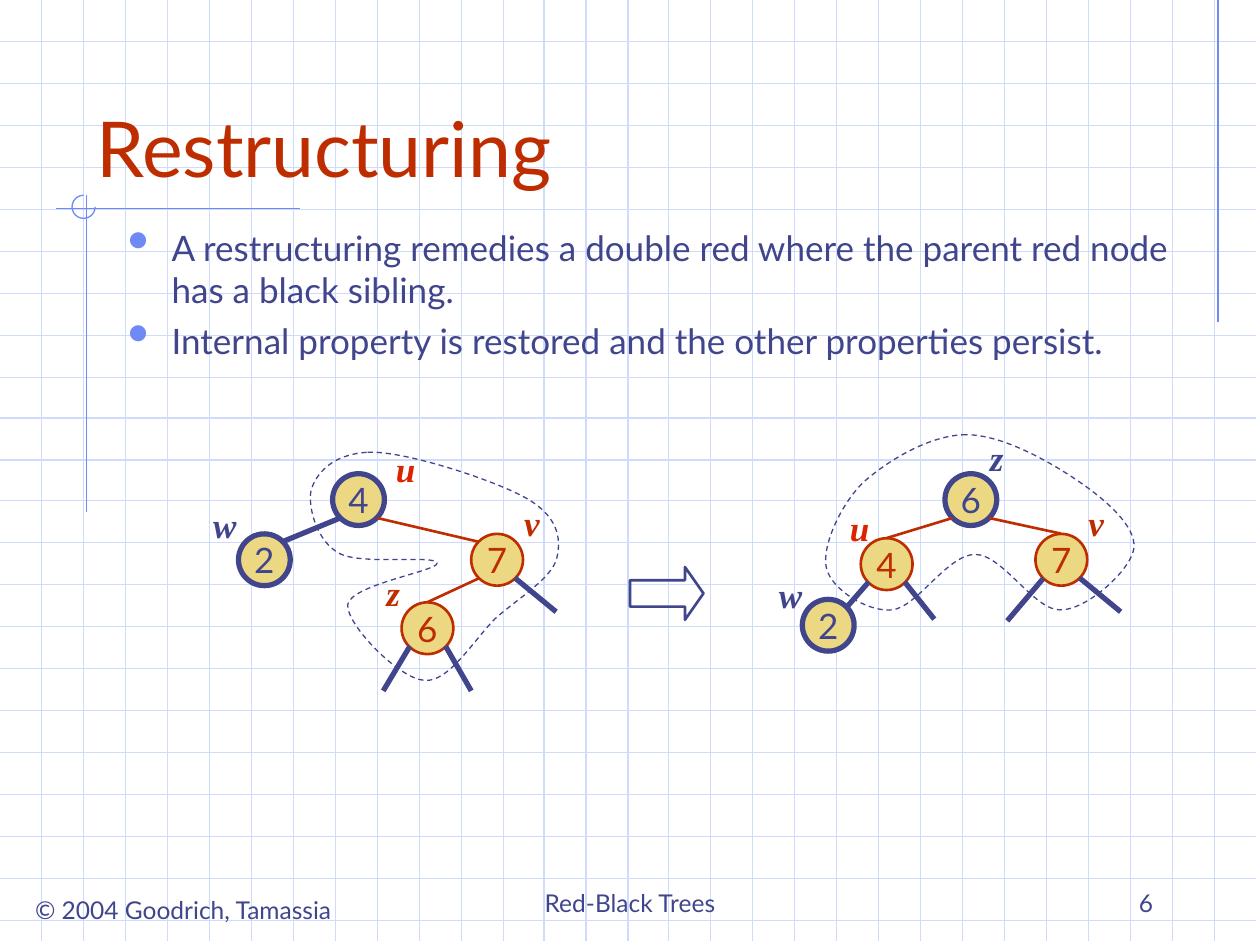
from lxml import etree
from pptx import Presentation
from pptx import util as u
from pptx.dml.color import RGBColor
from pptx.enum import dml, shapes, text
from pptx.oxml.ns import qn

Pt = u.Pt
GRID = RGBColor(0xCF, 0xDB, 0xFD)
ACCENT = RGBColor(0x6F, 0x89, 0xF7)
NAVY = RGBColor(0x40, 0x45, 0x8C)
RED = RGBColor(0xBE, 0x2D, 0x00)
BRIGHT_RED = RGBColor(0xDC, 0x23, 0x00)
SAND = RGBColor(0xEC, 0xD8, 0x82)
LEFT, CENTER, RIGHT = text.PP_ALIGN.LEFT, text.PP_ALIGN.CENTER, text.PP_ALIGN.RIGHT
TOP, MIDDLE, BOTTOM = text.MSO_ANCHOR.TOP, text.MSO_ANCHOR.MIDDLE, text.MSO_ANCHOR.BOTTOM

deck = Presentation()
deck.slide_width, deck.slide_height = Pt(720), Pt(540)
slide = deck.slides.add_slide(deck.slide_layouts[6])


def draw_line(x1, y1, x2, y2, color, width):
    line = slide.shapes.add_connector(
        shapes.MSO_CONNECTOR.STRAIGHT, Pt(x1), Pt(y1), Pt(x2), Pt(y2))
    line.line.color.rgb = color
    line.line.width = Pt(width)
    etree.SubElement(line._element.spPr, qn("a:effectLst"))


def write(shape, lines, size, color, align=CENTER, anchor=TOP, font="Lato", wrap=True):
    frame = shape.text_frame
    frame.word_wrap = wrap
    frame.vertical_anchor = anchor
    frame.text = "\n".join(lines)
    for paragraph in frame.paragraphs:
        paragraph.alignment = align
        paragraph.font.size = Pt(size)
        paragraph.font.name = font
        paragraph.font.color.rgb = color
    return frame.paragraphs


for row in range(1, 23):
    y = 24 * row - 0.15 - (row >= 10) - 0.7 * (row >= 12)
    draw_line(0, y, 718, y, GRID, 0.75)
for column in range(1, 30):
    x = 24 * column - 0.15 - (column >= 13) - 0.7 * (column >= 16)
    draw_line(x, 0, x, 538, GRID, 0.75)

draw_line(696, 0, 696, 184.3, ACCENT, 0.75)
draw_line(171.4, 119.3, 32.2, 119.3, ACCENT, 0.75)
draw_line(49.5, 111.6, 49.5, 292.5, ACCENT, 0.75)
corner = slide.shapes.add_shape(
    shapes.MSO_SHAPE.ARC, Pt(41.2), Pt(111.6), Pt(13.2), Pt(13.2))
corner.adjustments[0], corner.adjustments[1] = 0, 162
corner.fill.background()
corner.line.color.rgb = ACCENT
corner.line.width = Pt(0.75)
corner.shadow.inherit = False

for words, box, size, color, align, anchor, wrap in [
    ("© 2004 Goodrich, Tamassia", (11.5, 507.8, 186.5, 24.5), 14, NAVY, CENTER, TOP, False),
    ("Red-Black Trees", (246, 492, 228, 36), 14, NAVY, CENTER, BOTTOM, True),
    ("6", (516, 492, 150, 36), 14, NAVY, RIGHT, BOTTOM, True),
    ("Restructuring", (48, 24, 612, 90), 44, RED, LEFT, BOTTOM, True),
]:
    write(slide.shapes.add_textbox(*map(Pt, box)), [words], size, color, align, anchor, wrap=wrap)

body = slide.shapes.add_textbox(Pt(66), Pt(126), Pt(612), Pt(138))
body.text_frame.word_wrap = True
body.text_frame.text = "\n".join([
    "A restructuring remedies a double red where the parent red node has a black sibling.",
    "Internal property is restored and the other properties persist.",
])
body.text_frame.paragraphs[1].space_before = Pt(5)
for paragraph in body.text_frame.paragraphs:
    properties = paragraph._p.get_or_add_pPr()
    properties.set("marL", str(Pt(25)))
    properties.set("indent", str(Pt(-25)))
    bullet_color = etree.SubElement(properties, qn("a:buClr"))
    etree.SubElement(bullet_color, qn("a:srgbClr"), val=str(ACCENT))
    etree.SubElement(properties, qn("a:buSzPct"), val="176000")
    etree.SubElement(properties, qn("a:buFont"), typeface="OpenSymbol")
    etree.SubElement(properties, qn("a:buChar"), char="•")
    paragraph.alignment = LEFT
    paragraph.font.size = Pt(20)
    paragraph.font.name = "Lato"
    paragraph.font.color.rgb = NAVY

for key, x, y, color in [
    ("4", 190.1, 270.7, NAVY), ("6", 229.5, 344.2, RED),
    ("7", 269.3, 305.1, RED), ("2", 136.3, 305.1, NAVY),
    ("4", 491.9, 307.6, RED), ("6", 540, 270.7, NAVY),
    ("7", 591.7, 305.1, RED), ("2", 458.5, 342.5, NAVY),
]:
    node = slide.shapes.add_shape(shapes.MSO_SHAPE.OVAL, Pt(x), Pt(y), Pt(29.6), Pt(29.6))
    node.fill.solid()
    node.fill.fore_color.rgb = SAND
    node.line.color.rgb = color
    node.line.width = Pt(3 if color == NAVY else 1.5)
    node.shadow.inherit = False
    write(node, [key], 20, color, anchor=MIDDLE, wrap=False)

for edge in [
    (215.6, 296, 273.6, 309.6), (273.6, 330.5, 244.1, 344.2),
    (506.9, 307.4, 544.3, 296), (606.2, 304.9, 565.2, 296),
]:
    draw_line(*edge, RED, 1.5)
for edge in [
    (254.6, 369.2, 269.3, 394.8), (234.3, 369.2, 219, 394.8),
    (294.3, 330.3, 317.8, 349.6), (194.4, 296, 161.3, 309.6),
    (517, 332.6, 533.9, 353.8), (596.2, 330.5, 575.6, 354.8),
    (617, 330.3, 640.4, 349.6), (496.4, 332.6, 483.8, 347),
]:
    draw_line(*edge, NAVY, 3)

for letter, x, y, width, color in [
    ("z", 207.4, 323.3, 34.6, RED), ("v", 288.2, 283, 31.7, RED),
    ("w", 108.7, 284.4, 39.6, NAVY), ("u", 213.8, 252, 36, BRIGHT_RED),
    ("z", 552.2, 246, 34.6, NAVY), ("v", 610.6, 283, 31.7, RED),
    ("w", 432, 324, 39.6, NAVY), ("u", 478.6, 285.8, 25.2, BRIGHT_RED),
]:
    label = slide.shapes.add_textbox(Pt(x), Pt(y), Pt(width), Pt(31.5))
    for paragraph in write(label, [letter], 20, color, font="Times New Roman"):
        paragraph.font.bold = True
        paragraph.font.italic = True

becomes = slide.shapes.add_shape(
    shapes.MSO_SHAPE.RIGHT_ARROW, Pt(360), Pt(324), Pt(42), Pt(30.2))
becomes.adjustments[0], becomes.adjustments[1] = 0.5, 0.35
becomes.fill.background()
becomes.line.color.rgb = NAVY
becomes.line.width = Pt(1.5)
becomes.shadow.inherit = False

before = [
    (209.5, 258.5), (189.4, 259.9), (180.7, 270.7), (177.8, 280.1),
    (175.7, 290.2), (181.4, 309.6), (193.7, 316.1),
    (205.9, 323.3), (249.1, 316.8), (249.8, 321.8),
    (250.6, 326.2), (200.2, 334.1), (198.7, 345.6),
    (198, 357.1), (228.2, 388.1), (242.6, 388.8),
    (256.3, 390.2), (270.7, 365.8), (283, 353.5),
    (295.9, 342), (315.4, 330.5), (318.2, 319),
    (321.1, 306.7), (318.2, 294.5), (300.2, 284.4),
    (282.2, 274.3), (229.7, 257), (209.5, 258.5),
]
after = [
    (552.2, 248.4), (531.4, 248.4), (506.9, 263.5), (493.2, 275.8),
    (480.2, 288.7), (469.4, 312.5), (472.3, 324.7),
    (475.2, 337), (496.1, 349.9), (509.8, 348.5),
    (524.2, 347), (541.4, 316.8), (557.3, 316.8),
    (573.1, 316.8), (591.1, 349.2), (606.2, 348.5),
    (621.4, 348.5), (646.6, 325.4), (648, 313.2),
    (649.4, 301), (632.2, 285.8), (616.3, 275),
    (600.5, 264.2), (573.1, 248.4), (552.2, 248.4),
]
for controls in (before, after):
    builder = slide.shapes.build_freeform(*map(Pt, controls[0]))
    builder.add_line_segments([tuple(map(Pt, point)) for point in controls[1:]], close=True)
    region = builder.convert_to_shape()
    segments = list(region._element.iter(qn("a:lnTo")))
    for first in range(0, len(segments), 3):
        curve = etree.Element(qn("a:cubicBezTo"))
        segments[first].addprevious(curve)
        for segment in segments[first:first + 3]:
            curve.append(segment[0])
            segment.getparent().remove(segment)
    region.fill.background()
    region.line.color.rgb = NAVY
    region.line.width = Pt(0.75)
    region.line.dash_style = dml.MSO_LINE.DASH
    region.shadow.inherit = False

deck.save("out.pptx")
